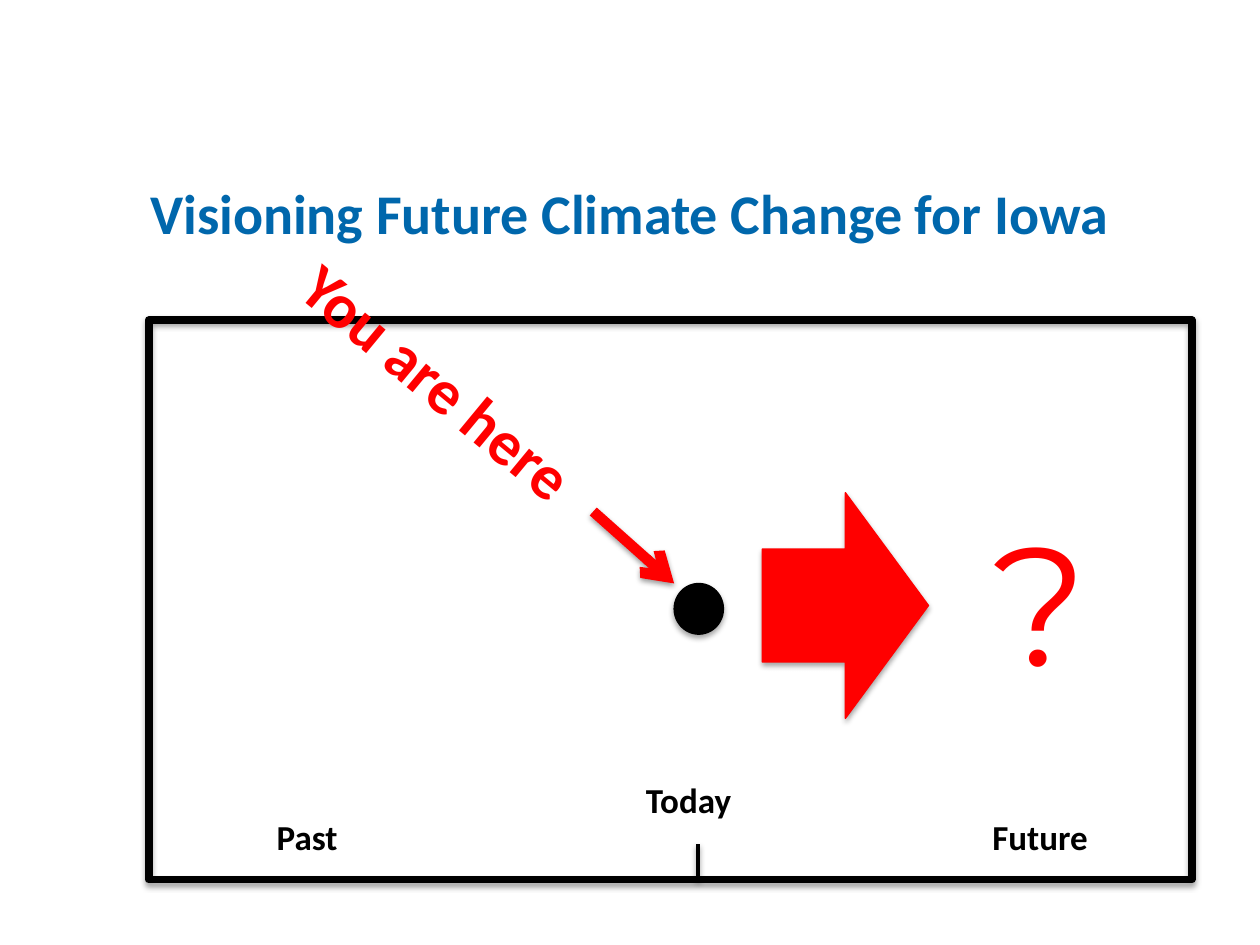
from pptx import Presentation
from pptx.dml.color import RGBColor
from pptx.enum.shapes import MSO_CONNECTOR, MSO_SHAPE
from pptx.enum.text import MSO_ANCHOR, MSO_AUTO_SIZE, PP_ALIGN
from pptx.oxml.ns import qn
from pptx.util import Pt
from lxml import etree

STRAIGHT = MSO_CONNECTOR.STRAIGHT
RECTANGLE, OVAL, RIGHT_ARROW = MSO_SHAPE.RECTANGLE, MSO_SHAPE.OVAL, MSO_SHAPE.RIGHT_ARROW
TOP, FIT = MSO_ANCHOR.TOP, MSO_AUTO_SIZE.SHAPE_TO_FIT_TEXT
LEFT, CENTER = PP_ALIGN.LEFT, PP_ALIGN.CENTER

THEME = {
    "black": RGBColor(0x00, 0x00, 0x00),
    "red": RGBColor(0xFF, 0x00, 0x00),
    "blue": RGBColor(0x00, 0x67, 0xAC),
    "body_font": "Calibri",
    "symbol_font": "Montserrat",
    "label": Pt(20),
    "title": Pt(32),
    "callout": Pt(36),
    "symbol": Pt(96),
}


def write(box, text, *, size, color, font=THEME["body_font"], bold=True, align=LEFT, wrap=True):
    frame = box.text_frame
    frame.word_wrap = wrap
    frame.auto_size = FIT
    frame.vertical_anchor = TOP
    paragraph = frame.paragraphs[0]
    paragraph.alignment = align
    run = paragraph.add_run()
    run.text = text
    run.font.name = font
    run.font.size = size
    run.font.bold = bold
    run.font.color.rgb = color


prs = Presentation()
prs.slide_width, prs.slide_height = Pt(720), Pt(540)
slide = prs.slides.add_slide(prs.slide_layouts[5])
shapes = slide.shapes

# Title
title = shapes.title
title.left, title.top, title.width, title.height = Pt(0), Pt(98.6), Pt(720), Pt(46)
write(title, "Visioning Future Climate Change for Iowa",
      size=THEME["title"], color=THEME["blue"], align=CENTER)

# Timeline frame, with the theme's soft shadow
frame = shapes.add_shape(RECTANGLE, Pt(85), Pt(183), Pt(596), Pt(319.6))
frame.fill.background()
frame.line.color.rgb = THEME["black"]
frame.line.width = Pt(4.5)

# Period labels
for period, left, top, width in (
    ("Today", 362, 441.4, 73.5),
    ("Past", 151, 462.2, 50.5),
    ("Future", 560, 462.2, 88),
):
    label = shapes.add_textbox(Pt(left), Pt(top), Pt(width), Pt(31.5))
    write(label, period, size=THEME["label"], color=THEME["black"])

# Today tick
tick = shapes.add_connector(STRAIGHT, Pt(399), Pt(482.4), Pt(399), Pt(503.3))
tick.line.color.rgb = THEME["black"]
tick.line.width = Pt(2)

# Present-day dot and arrow to the future
for kind, color, left, top, width, height in (
    (OVAL, THEME["black"], 385.2, 333.4, 28.2, 29),
    (RIGHT_ARROW, THEME["red"], 435.6, 281.5, 95, 129),
):
    marker = shapes.add_shape(kind, Pt(left), Pt(top), Pt(width), Pt(height))
    marker.fill.solid()
    marker.fill.fore_color.rgb = color
    marker.line.color.rgb = color
    marker.line.width = Pt(0.75)

# Unknown future
unknown = shapes.add_textbox(Pt(560), Pt(281.5), Pt(73.5), Pt(123.8))
write(unknown, "?", size=THEME["symbol"], color=THEME["red"],
      font=THEME["symbol_font"], bold=False, wrap=False)

# Slanted callout and its pointer
callout = shapes.add_textbox(Pt(149), Pt(194.4), Pt(207.4), Pt(51))
callout.rotation = 39.7
write(callout, "You are here", size=THEME["callout"], color=THEME["red"], wrap=False)

pointer = shapes.add_connector(STRAIGHT, Pt(339), Pt(292.3), Pt(385.2), Pt(333.4))
pointer.line.color.rgb = THEME["red"]
pointer.line.width = Pt(6)
etree.SubElement(pointer.line._get_or_add_ln(), qn("a:tailEnd"), type="arrow")

prs.save("out.pptx")
